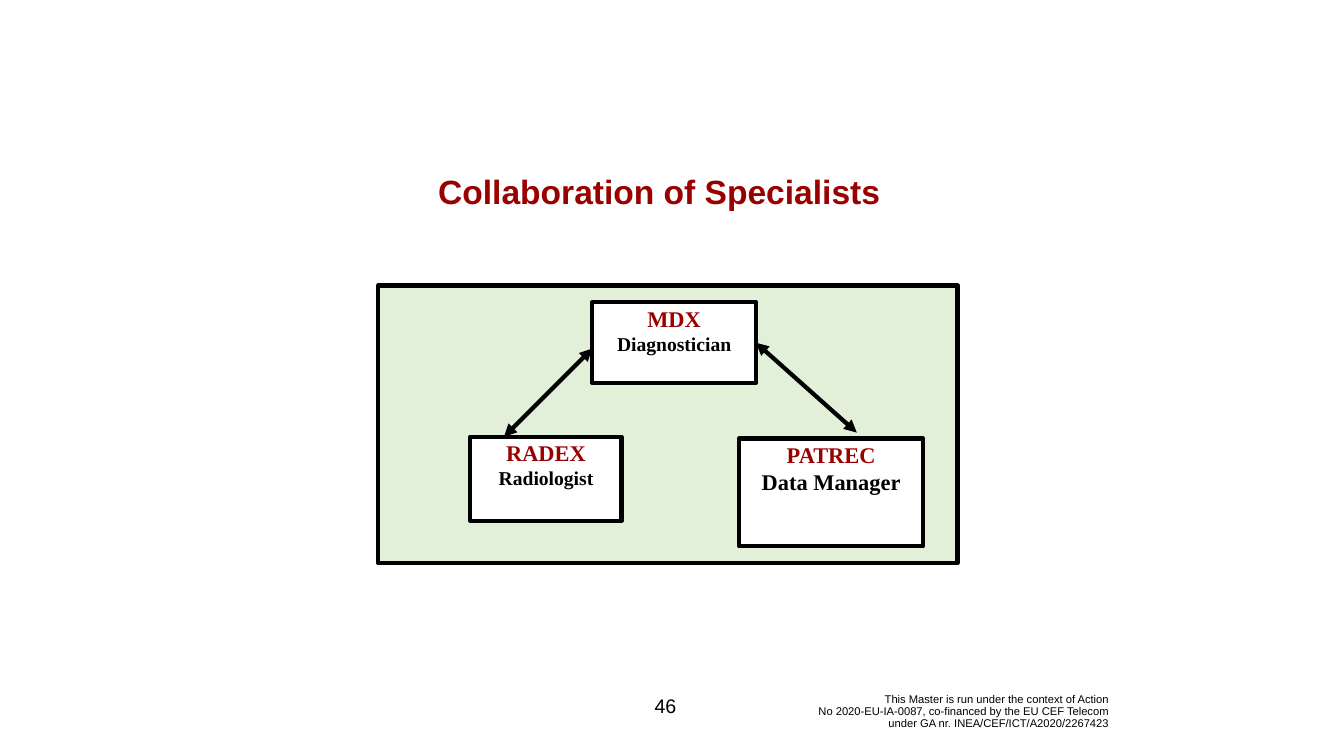
from lxml.etree import SubElement
from pptx import Presentation
from pptx.dml.color import RGBColor
from pptx.enum.shapes import MSO_CONNECTOR as Connector, MSO_SHAPE as Shape
from pptx.enum.text import MSO_ANCHOR as Anchor, PP_ALIGN as Align
from pptx.oxml.ns import qn
from pptx.util import Inches, Pt

COLORS = {"ink": "000000", "accent": "990000", "panel": "E2F0D9", "card": "FFFFFF"}
COLUMNS, ROWS = 320, 180
CELL = Inches(1 / 12)
BORDER = Pt(6)
SPECIALISTS = {
    "MDX": ("Diagnostician", 28, (141, 72, 39, 19.2)),
    "PATREC": ("Data Manager", 32, (176, 104.4, 43.8, 25.7)),
    "RADEX": ("Radiologist", 28, (112, 104, 36, 20)),
}
FUNDING = (
    "This Master is run under the context of Action\n"
    "No 2020-EU-IA-0087, co-financed by the EU CEF Telecom\n"
    "under GA nr. INEA/CEF/ICT/A2020/2267423"
)


def cells(*counts):
    """Turn grid counts into lengths."""
    return [round(count * CELL) for count in counts]


def color(name):
    """Look up a named colour."""
    return RGBColor.from_string(COLORS[name])


def write(para, text, size, font="Arial", ink="ink", bold=False, align=Align.CENTER):
    """Fill and format one paragraph."""
    para.text = text
    para.alignment = align
    para.font.name = font
    para.font.size = Pt(size)
    para.font.bold = bold
    para.font.color.rgb = color(ink)


def add_title(page, text):
    """Place the slide title."""
    title = page.shapes.title
    title.left, title.top, title.width, title.height = cells(100, 40, 114, 10.9)
    title.text_frame.vertical_anchor = Anchor.TOP
    write(title.text_frame.paragraphs[0], text, 48, ink="accent", bold=True)


def add_label(page, area, text, size, **style):
    """Add a vertically centred text box."""
    frame = page.shapes.add_textbox(*cells(*area)).text_frame
    frame.word_wrap = True
    frame.vertical_anchor = Anchor.MIDDLE
    write(frame.paragraphs[0], text, size, **style)
    return frame


def add_box(page, area, fill):
    """Add a filled rectangle with a heavy border."""
    box = page.shapes.add_shape(Shape.RECTANGLE, *cells(*area))
    box.shadow.inherit = False
    box.fill.solid()
    box.fill.fore_color.rgb = color(fill)
    box.line.color.rgb = color("ink")
    box.line.width = BORDER
    return box


def add_specialist(page, name, role, role_size, area):
    """Add a card with a system name above its role."""
    box = add_box(page, area, "card")
    frame = box.text_frame
    frame.vertical_anchor = Anchor.TOP
    serif = {"font": "Times New Roman", "bold": True}
    write(frame.paragraphs[0], name, 32, ink="accent", **serif)
    write(frame.add_paragraph(), role, role_size, **serif)
    return box


def add_arrow(page, *ends):
    """Add a double-headed arrow."""
    arrow = page.shapes.add_connector(Connector.STRAIGHT, *cells(*ends))
    arrow.line.color.rgb = color("ink")
    arrow.line.width = BORDER
    outline = arrow.line._get_or_add_ln()
    for end in ("a:headEnd", "a:tailEnd"):
        SubElement(outline, qn(end), type="triangle")
    SubElement(outline.getparent(), qn("a:effectLst"))
    return arrow


def main():
    """Build the collaboration slide."""
    deck = Presentation()
    deck.slide_width, deck.slide_height = cells(COLUMNS, ROWS)
    page = deck.slides.add_slide(deck.slide_layouts[5])
    add_title(page, "Collaboration of Specialists")
    add_label(page, (180.2, 164.9, 85, 9.1), FUNDING, 16, align=Align.RIGHT)
    page.shapes[-1].text_frame.paragraphs[0].line_spacing = 0.9
    add_label(page, (151.8, 163.3, 13.3, 9.6), "46", 28)
    add_box(page, (90, 68, 138, 66), "panel")
    boxes = {
        name: add_specialist(page, name, *details)
        for name, details in SPECIALISTS.items()
    }
    add_arrow(page, 141, 83, 120, 104)
    add_arrow(page, 180, 82, 204, 103).begin_connect(boxes["MDX"], 3)
    deck.save("out.pptx")


if __name__ == "__main__":
    main()
